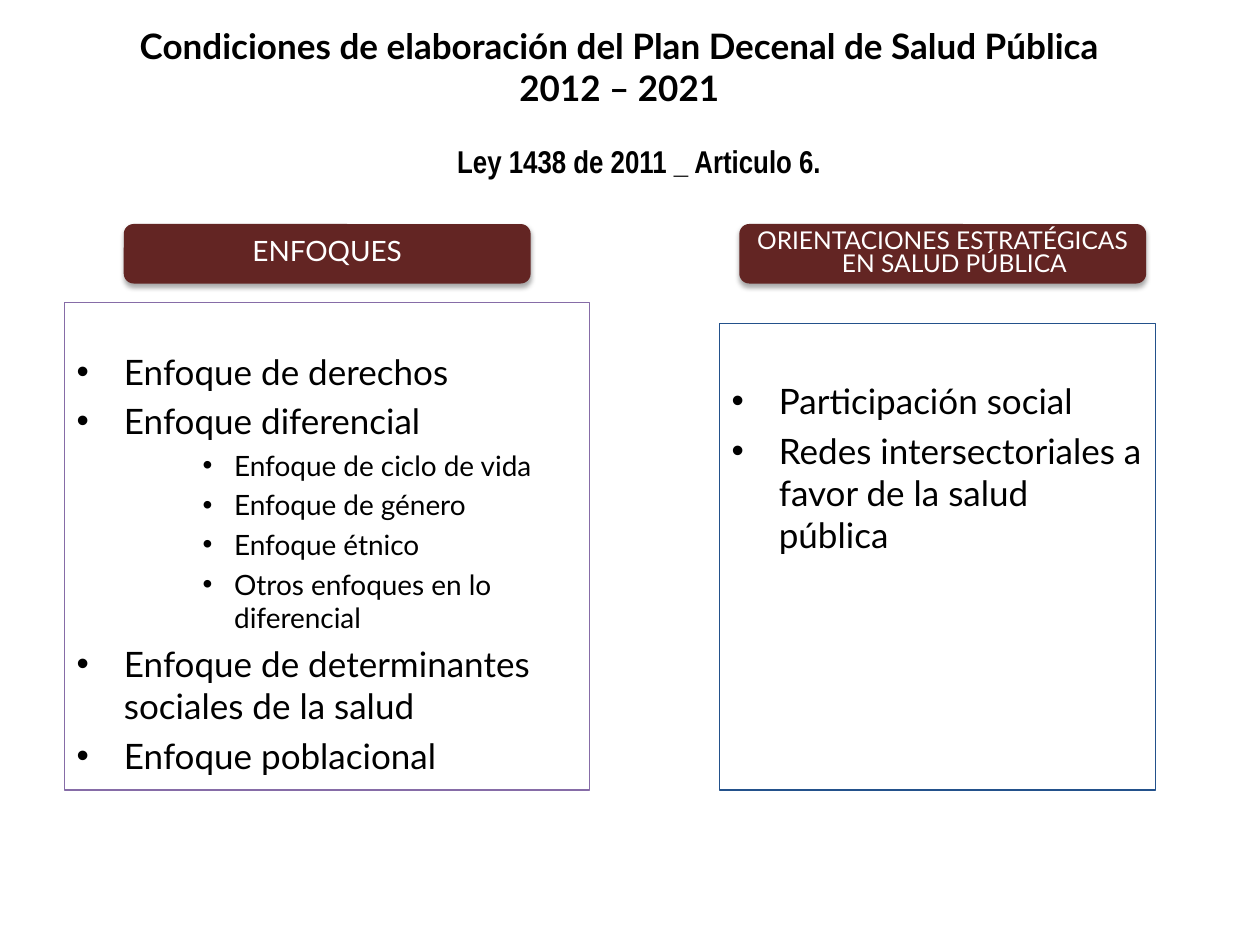
from lxml.etree import SubElement
from pptx import Presentation
from pptx.dml.color import RGBColor
from pptx.enum.shapes import MSO_SHAPE as Shape
from pptx.enum.text import MSO_ANCHOR as Anchor, PP_ALIGN as Align
from pptx.oxml import parse_xml
from pptx.oxml.ns import nsdecls, qn
from pptx.util import Pt

BLACK = RGBColor(0x00, 0x00, 0x00)
WHITE = RGBColor(0xFF, 0xFF, 0xFF)
MAROON = RGBColor(0x63, 0x25, 0x23)
PURPLE = RGBColor(0x86, 0x6C, 0xA7)
BLUE = RGBColor(0x23, 0x51, 0x8B)

SHADOW = f"""<a:effectLst {nsdecls('a')}>
  <a:outerShdw blurRad="{Pt(3.1)}" dist="{Pt(1.8)}" dir="5400000" rotWithShape="0">
    <a:srgbClr val="000000"><a:alpha val="35000"/></a:srgbClr>
  </a:outerShdw>
</a:effectLst>"""

LEVELS = {
    0: {"size": 20, "margin": 27, "hang": 27, "before": 4.5},
    1: {"size": 16, "margin": 90, "hang": 18, "before": 3.5},
}

APPROACHES = [
    (0, "Enfoque de derechos"),
    (0, "Enfoque diferencial"),
    (1, "Enfoque de ciclo de vida"),
    (1, "Enfoque de género"),
    (1, "Enfoque étnico"),
    (1, "Otros enfoques en lo diferencial"),
    (0, "Enfoque de determinantes sociales de la salud"),
    (0, "Enfoque poblacional"),
]
STRATEGIES = [
    (0, "Participación social"),
    (0, "Redes intersectoriales a favor de la salud pública"),
]


class SlideBuilder:
    """Draws styled titles, headers and bulleted panels on the current page."""

    font = "Lato"

    def __init__(self, page):
        self.page = page

    def add_span(self, para, text, **formats):
        span = para.add_run()
        span.text = text
        values = {"name": self.font, "bold": False, **formats}
        span.font.color.rgb = values.pop("color", BLACK)
        for name, value in values.items():
            setattr(span.font, name, value)

    def indent(self, para, margin, hang):
        props = para._p.get_or_add_pPr()
        props.set("marL", str(Pt(margin)))
        props.set("indent", str(-Pt(hang)))
        return props

    def heading(self, text, bounds, **formats):
        box = self.page.shapes.add_textbox(*map(Pt, bounds))
        frame = box.text_frame
        frame.word_wrap = True
        frame.vertical_anchor = Anchor.MIDDLE
        para = frame.paragraphs[0]
        para.alignment = Align.CENTER
        self.add_span(para, text, bold=True, **formats)

    def header(self, text, bounds, size):
        box = self.page.shapes.add_shape(Shape.ROUNDED_RECTANGLE, *map(Pt, bounds))
        box.fill.solid()
        box.fill.fore_color.rgb = MAROON
        box.line.fill.background()
        box._element.spPr.append(parse_xml(SHADOW))
        box.text_frame.word_wrap = True
        box.text_frame.vertical_anchor = Anchor.MIDDLE
        para = box.text_frame.paragraphs[0]
        para.alignment = Align.CENTER
        para.line_spacing = 0.8
        self.indent(para, 13.5, 13.5)
        self.add_span(para, text, size=Pt(size), color=WHITE)

    def panel(self, items, bounds, line, top_inset):
        box = self.page.shapes.add_shape(Shape.RECTANGLE, *map(Pt, bounds))
        box.shadow.inherit = False
        box.fill.background()
        box.line.color.rgb = line
        box.line.width = Pt(0.75)
        frame = box.text_frame
        frame.word_wrap = True
        frame.vertical_anchor = Anchor.TOP
        frame.margin_top = Pt(top_inset)
        for index, (level, text) in enumerate(items):
            style = LEVELS[level]
            para = frame.add_paragraph() if index else frame.paragraphs[0]
            para.alignment = Align.LEFT
            para.level = level
            para.space_before = Pt(style["before"] if index else 0)
            props = self.indent(para, style["margin"], style["hang"])
            SubElement(props, qn("a:buFont")).set("typeface", "Arial")
            SubElement(props, qn("a:buChar")).set("char", "•")
            self.add_span(para, text, size=Pt(style["size"]))


def main():
    deck = Presentation()
    deck.slide_width, deck.slide_height = Pt(720), Pt(540)
    builder = SlideBuilder(deck.slides.add_slide(deck.slide_layouts[6]))

    builder.heading("Condiciones de elaboración del Plan Decenal de Salud Pública 2012 – 2021",
                    (48, 4, 612, 67.5), size=Pt(20))
    builder.panel(APPROACHES, (36.75, 173, 300, 278.5), PURPLE, 27)
    builder.header("ENFOQUES", (70.75, 128, 232.5, 34), 16)
    builder.header("ORIENTACIONES ESTRATÉGICAS EN SALUD PÚBLICA", (422.5, 128, 232.5, 34), 14)
    builder.panel(STRATEGIES, (411, 185, 249.5, 266.5), BLUE, 32)
    builder.heading("Ley 1438 de 2011 _ Articulo 6.", (167, 77.25, 396.5, 29),
                    size=Pt(18), name="Arial Narrow")

    deck.save("out.pptx")


if __name__ == "__main__":
    main()
